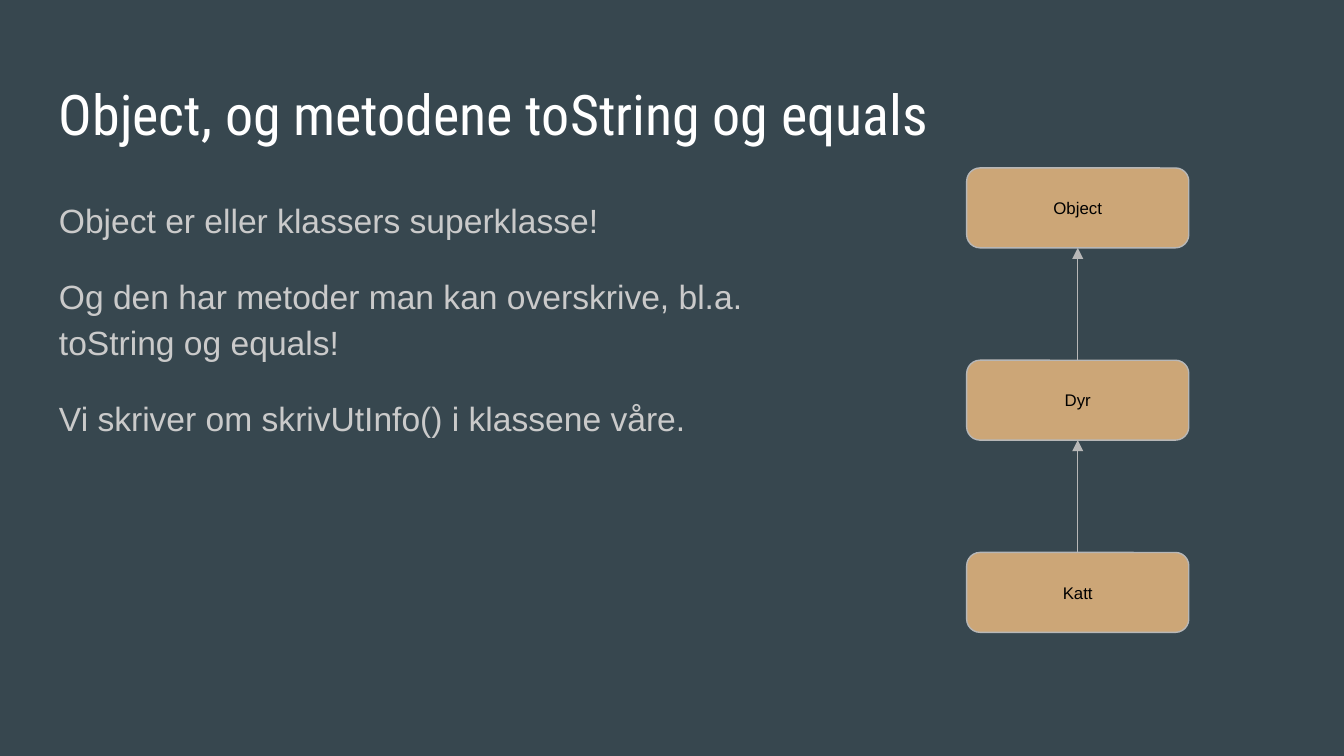
from lxml.etree import SubElement
from pptx import Presentation
from pptx.dml.color import RGBColor
from pptx.enum.shapes import MSO_CONNECTOR as Connector, MSO_SHAPE as Shape
from pptx.enum.text import MSO_ANCHOR as Anchor, PP_ALIGN as Align
from pptx.oxml.ns import qn
from pptx.util import Pt

COLORS = {
    "background": "37474F",
    "title": "FFFFFF",
    "body": "CACACA",
    "box": "CCA677",
    "line": "B7B7B7",
    "label": "000000",
}
TITLE = "Object, og metodene toString og equals"
BODY = [
    "Object er eller klassers superklasse!",
    "Og den har metoder man kan overskrive, bl.a. toString og equals!",
    "Vi skriver om skrivUtInfo() i klassene våre.",
]
CLASSES = ["Object", "Dyr", "Katt"]
BOX_LEFT, BOX_TOP, BOX_WIDTH, BOX_HEIGHT, BOX_STEP = 517.9, 90, 119, 42.8, 103


def color(name):
    """Return the named colour."""
    return RGBColor.from_string(COLORS[name])


def add_run(paragraph, text, size, font, color_name):
    """Add one formatted run to a paragraph."""
    run = paragraph.add_run()
    run.text = text
    run.font.size = Pt(size)
    run.font.name = font
    run.font.color.rgb = color(color_name)


def set_frame(frame, anchor):
    """Set wrapping, anchor and equal insets of a text frame."""
    frame.word_wrap = True
    frame.vertical_anchor = anchor
    frame.margin_left = frame.margin_right = Pt(7.2)
    frame.margin_top = frame.margin_bottom = Pt(7.2)


def add_text(slide, bounds, texts, size, font, color_name, spacing=1.0, gap=0):
    """Add a text box with one paragraph for each text."""
    frame = slide.shapes.add_textbox(*map(Pt, bounds)).text_frame
    set_frame(frame, Anchor.TOP)
    for index, text in enumerate(texts):
        paragraph = frame.add_paragraph() if index else frame.paragraphs[0]
        paragraph.line_spacing = spacing
        paragraph.space_before = Pt(gap if index else 0)
        add_run(paragraph, text, size, font, color_name)


def add_class_box(slide, name, top):
    """Add a rounded box holding a class name."""
    shape = slide.shapes.add_shape(
        Shape.ROUNDED_RECTANGLE, Pt(BOX_LEFT), Pt(top), Pt(BOX_WIDTH), Pt(BOX_HEIGHT)
    )
    shape.shadow.inherit = False
    shape.fill.solid()
    shape.fill.fore_color.rgb = color("box")
    shape.line.color.rgb = color("line")
    shape.line.width = Pt(0.75)
    set_frame(shape.text_frame, Anchor.MIDDLE)
    paragraph = shape.text_frame.paragraphs[0]
    paragraph.alignment = Align.CENTER
    add_run(paragraph, name, 9, "Arial", "label")
    return shape


def add_inheritance_arrow(slide, subclass, superclass):
    """Join a subclass to its superclass with an arrow."""
    connector = slide.shapes.add_connector(Connector.STRAIGHT, 0, 0, 0, 0)
    connector.begin_connect(subclass, 0)
    connector.end_connect(superclass, 2)
    connector.line.color.rgb = color("line")
    connector.line.width = Pt(0.75)
    SubElement(connector.line._get_or_add_ln(), qn("a:tailEnd"), type="triangle")
    SubElement(connector._element.spPr, qn("a:effectLst"))


def main():
    """Build the slide and save it."""
    presentation = Presentation()
    presentation.slide_width, presentation.slide_height = Pt(720), Pt(405)
    slide = presentation.slides.add_slide(presentation.slide_layouts[6])
    slide.background.fill.solid()
    slide.background.fill.fore_color.rgb = color("background")

    add_text(slide, (24.5, 35.3, 671, 45.4), [TITLE], 30, "Roboto Condensed", "title")
    add_text(slide, (24.5, 96.5, 411, 264), BODY, 18, "Arial", "body", 1.15, 16)
    boxes = [
        add_class_box(slide, name, BOX_TOP + index * BOX_STEP)
        for index, name in enumerate(CLASSES)
    ]
    for superclass, subclass in zip(boxes, boxes[1:]):
        add_inheritance_arrow(slide, subclass, superclass)
    presentation.save("out.pptx")


if __name__ == "__main__":
    main()
